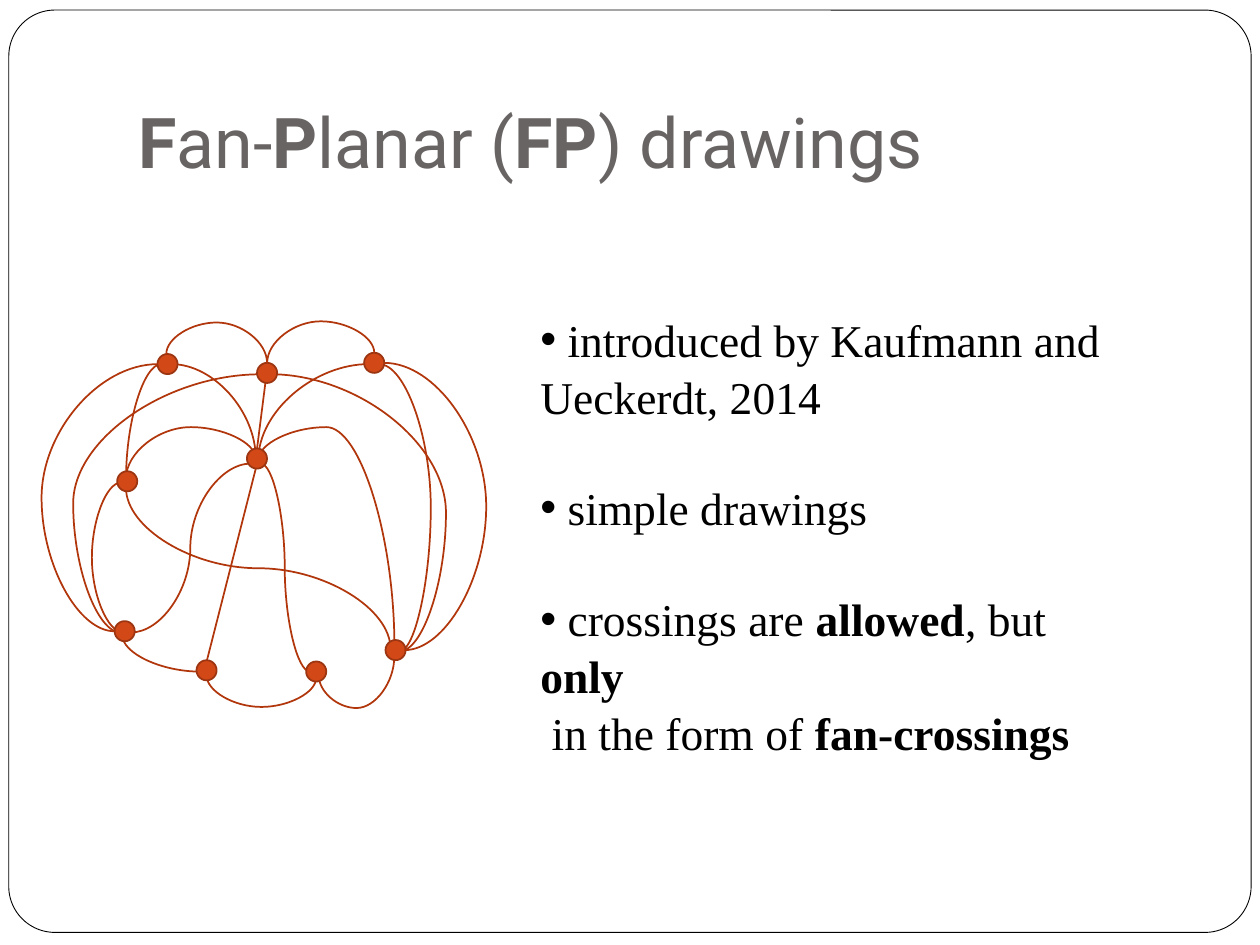
from lxml.etree import SubElement
from pptx import Presentation
from pptx.dml.color import RGBColor
from pptx.enum.shapes import MSO_CONNECTOR as Link, MSO_SHAPE as Shape
from pptx.enum.text import MSO_ANCHOR as Anchor
from pptx.oxml.ns import qn
from pptx.util import Inches, Pt

# Content: each paragraph is a list of (text, bold) spans
TITLE = [("F", True), ("an-", False), ("P", True), ("lanar (", False),
         ("FP", True), (") drawings", False)]
POINTS = [
    dict(spans=[(" introduced by Kaufmann and Ueckerdt, 2014", False)], bullet=True),
    dict(spans=[(" simple drawings", False)], bullet=True, gap=31.1),
    dict(spans=[(" crossings are ", False), ("allowed", True), (", but ", False),
                ("only", True)], bullet=True, gap=31.1),
    dict(spans=[(" in the form of ", False), ("fan-crossings", True)]),
]

# Grid of 100 columns by 75 rows
COLUMNS, ROWS, CELL = 100, 75, 0.1
COLORS = {"paper": "FFFFFF", "frame": "000000", "title": "696464",
          "text": "000000", "edge": "B1360B", "node": "D34817", "rim": "9C3511"}

# Graph: node centres, then edges as (start, end, first direction, bend).
# The bend is the column (across) or row (down) of the middle stretch;
# None gives a single quarter turn.
NODE_SIZE = 1.6
NODES = [(21.2, 29.6), (13.3, 28.9), (10.1, 38.2), (9.9, 50.1), (16.4, 53.2),
         (25.1, 53.3), (31.4, 51.6), (29.7, 28.8), (20.4, 36.4)]
STRAIGHT_EDGES = [((20.3, 37.2), (16.3, 52.9)), ((20.3, 36.4), (21.1, 30.1))]
BACK_CURVES = [
    ((20.7, 36.8), (24.6, 53.3), "across", 22.6),
    ((10.4, 50.2), (19.9, 36.8), "across", 15.1),
    ((10, 38.7), (31, 51.5), "down", 45.1),
    ((10, 38), (20.3, 36.4), "down", 33.9),
    ((20.5, 36.5), (31.3, 51.3), "down", 33.9),
    ((9.8, 50.2), (9.6, 38.3), "across", 7.3),
    ((9.7, 50.4), (15.9, 53.3), "down", None),
    ((16.4, 53.6), (25.1, 53.8), "down", 56.1),
    ((25.3, 53.6), (31.3, 52.1), "down", 56.2),
    ((20.3, 36.4), (13.6, 28.9), "down", None),
    ((10, 38), (12.8, 28.9), "down", None),
    ((20.5, 36.5), (29.3, 28.9), "down", None),
    ((30.1, 28.9), (31.7, 51.7), "across", 34.2),
    ((20.7, 29.7), (9.6, 50.2), "across", 5.8),
    ((21.4, 29.7), (31.7, 51.7), "across", 35.4),
]
FRONT_CURVES = [
    ((13.2, 28.1), (21.2, 28.8), "down", 25.6),
    ((21.2, 28.8), (29.7, 28), "down", 25.5),
    ((12.5, 28.9), (9.1, 50.1), "across", 3.3),
    ((30.5, 28.8), (32.1, 51.6), "across", 38.6),
]


def cells(*counts):
    return [Inches(count * CELL) for count in counts]


def color(name):
    return RGBColor.from_string(COLORS[name])


def add_outline(page, kind, place, fill, line, width):
    shape = page.shapes.add_shape(kind, *cells(*place))
    shape.shadow.inherit = False
    shape.fill.solid()
    shape.fill.fore_color.rgb = color(fill)
    shape.line.color.rgb = color(line)
    shape.line.width = Pt(width)
    return shape


def add_text(page, place, paragraphs, *, font, size, ink, anchor=Anchor.TOP,
             bottom=0.05, spacing=None):
    box = page.shapes.add_textbox(*cells(*place))
    frame = box.text_frame
    frame.word_wrap = True
    frame.vertical_anchor = anchor
    frame.margin_bottom = Inches(bottom)
    for index, item in enumerate(paragraphs):
        para = frame.add_paragraph() if index else frame.paragraphs[0]
        para.line_spacing = spacing
        para.space_before = Pt(item.get("gap", 0))
        if item.get("bullet"):
            props = para._p.get_or_add_pPr()
            props.set("marL", "0")
            props.set("indent", "0")
            SubElement(props, qn("a:buFont")).set("typeface", "Arial")
            SubElement(props, qn("a:buChar")).set("char", "•")
        for words, bold in item["spans"]:
            span = para.add_run()
            span.text = words
            span.font.name, span.font.size, span.font.bold = font, Pt(size), bold
            span.font.color.rgb = color(ink)


def add_edge(page, kind, start, end):
    edge = page.shapes.add_connector(kind, *cells(*start, *end))
    edge.line.color.rgb = color("edge")
    edge.line.width = Pt(1)
    SubElement(edge._element.spPr, qn("a:effectLst"))
    return edge


def add_curve(page, start, end, direction, bend):
    (x1, y1), (x2, y2) = start, end
    wide, high = x2 - x1, y2 - y1
    # A curve that first runs down is an across curve turned by a quarter
    if direction == "across":
        turn = 0 if wide > 0 else 180
        flips = {"flipV": (high < 0) == (wide > 0)}
        half_w, half_h, along, origin = abs(wide) / 2, abs(high) / 2, wide, x1
    else:
        turn = 90 if wide * high < 0 else 270
        flips = {"flipH": (high < 0) == (turn == 90),
                 "flipV": (high < 0) if turn == 90 else (wide < 0)}
        half_w, half_h, along, origin = abs(high) / 2, abs(wide) / 2, high, y1
    mid_x, mid_y = (x1 + x2) / 2, (y1 + y2) / 2
    edge = add_edge(page, Link.CURVE, (mid_x - half_w, mid_y - half_h),
                    (mid_x + half_w, mid_y + half_h))

    frame = edge._element.spPr.find(qn("a:xfrm"))
    frame.set("rot", str(turn * 60000))
    for name, flipped in flips.items():
        if flipped:
            frame.set(name, "1")
    outline = edge._element.spPr.find(qn("a:prstGeom"))
    if bend is None:
        outline.set("prst", "curvedConnector2")
    else:
        guide = SubElement(outline.find(qn("a:avLst")), qn("a:gd"))
        guide.set("name", "adj1")
        guide.set("fmla", f"val {round((bend - origin) / along * 100000)}")


def main():
    deck = Presentation()
    deck.slide_width, deck.slide_height = cells(COLUMNS, ROWS)
    page = deck.slides.add_slide(deck.slide_layouts[6])

    # Frame and title
    frame = add_outline(page, Shape.ROUNDED_RECTANGLE, (0.7, 0.8, 98.6, 73.2),
                        "paper", "frame", 0.5)
    frame.adjustments[0] = 0.05
    add_text(page, (10, 3, 85, 12.5), [dict(spans=TITLE)], font="Roboto", size=40,
             ink="title", anchor=Anchor.BOTTOM, bottom=0.1)

    # Graph
    for start, end in STRAIGHT_EDGES:
        add_edge(page, Link.STRAIGHT, start, end)
    for curve in BACK_CURVES:
        add_curve(page, *curve)
    for x, y in NODES:
        corner = (x - NODE_SIZE / 2, y - NODE_SIZE / 2)
        add_outline(page, Shape.OVAL, (*corner, NODE_SIZE, NODE_SIZE), "node", "rim", 1)
    for curve in FRONT_CURVES:
        add_curve(page, *curve)

    # Points
    add_text(page, (41.9, 24.1, 47.4, 31.6), POINTS, font="Times New Roman",
             size=26, ink="text", spacing=1.04)
    deck.save("out.pptx")


if __name__ == "__main__":
    main()
